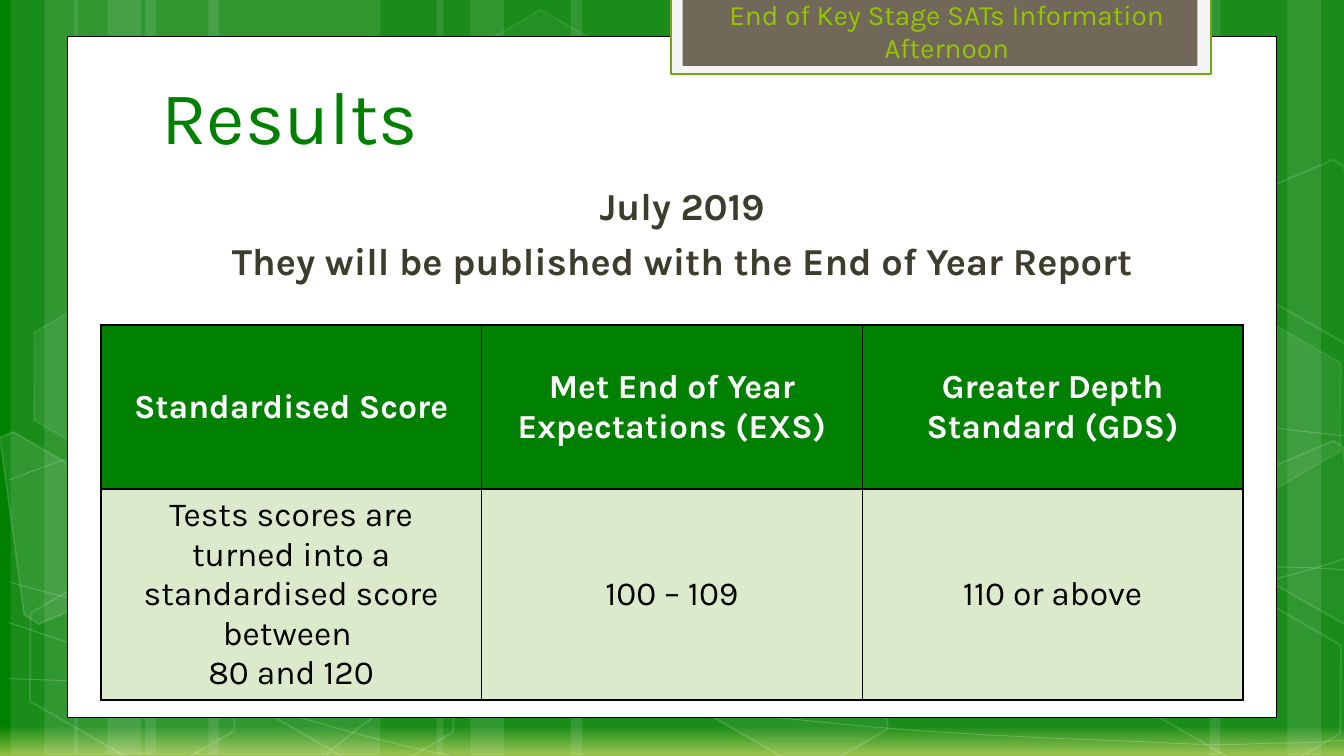
import math
import pptx
import pptx.util
import pptx.dml.color
import pptx.enum.shapes
import pptx.enum.text
import pptx.oxml
import pptx.oxml.ns
from lxml import etree

PX = 9144
WIDE, HIGH = 1000, 562
FONT = "Karla"
RGB = pptx.dml.color.RGBColor
WHITE = RGB(0xFF, 0xFF, 0xFF)
BLACK = RGB(0x00, 0x00, 0x00)
GREEN = RGB(0x00, 0x80, 0x00)
LIME = RGB(0x93, 0xBF, 0x3F)
OLIVE = RGB(0x81, 0xA5, 0x3E)
PALE = RGB(0xDC, 0xEA, 0xCC)
LEAF = RGB(0x74, 0xA5, 0x10)
BRIGHT = RGB(0x94, 0xC6, 0x00)
CLOUD = RGB(0xF5, 0xF5, 0xF5)
BROWN = RGB(0x71, 0x68, 0x5A)
DARK = RGB(0x3E, 0x3D, 0x2D)
KIND = pptx.enum.shapes.MSO_SHAPE
ALIGN = pptx.enum.text.PP_ALIGN
ANCHOR = pptx.enum.text.MSO_ANCHOR
qn = pptx.oxml.ns.qn

BARS = [(108, 175), (8, 50), (33, 83), (155, 175), (55, 50), (80, 83),
        (733, 175), (958, 50), (900, 83), (425, 308), (325, 50), (350, 83)]
CURVES = [
    [(7, 505), (61, 507), (115, 509), (190, 508), (265, 507), (358, 506), (458, 499),
     (558, 491), (700, 477), (792, 463), (883, 448), (977, 426), (1007, 413)],
    [(7, 357), (36, 346), (65, 335), (121, 323), (178, 312), (259, 296), (347, 290),
     (436, 285), (544, 284), (654, 290), (764, 296), (947, 319), (1007, 325)],
    [(6, 463), (127, 504), (247, 545), (334, 562)],
    [(7, 433), (38, 442), (70, 450), (128, 462), (186, 474), (273, 492), (357, 505),
     (440, 517), (545, 531), (628, 539), (711, 547), (800, 550), (853, 552),
     (905, 555), (919, 554), (945, 553), (971, 553), (989, 552), (1007, 550)],
    [(242, 562), (260, 547), (278, 532), (302, 518), (326, 504), (360, 489), (388, 479),
     (416, 469), (433, 464), (470, 457), (506, 449), (573, 438), (608, 433),
     (644, 428), (649, 429), (680, 427), (711, 425), (760, 423), (794, 422),
     (829, 421), (886, 422), (886, 422), (908, 422), (931, 422), (953, 422),
     (971, 422), (988, 423), (997, 424), (1006, 424), (1003, 424), (1006, 425)],
]
HEXES = [(334, 27, 4, 8), (497, 442, 6, 12), (11, 443, 0, 12), (14, 234, 7, 8),
         (174, 444, 0, 12), (834, 445, 0, 12), (834, 235, 7, 8)]
CUTS = [
    ([(0, 325), (10, 321), (86, 365), (95, 436), (29, 464), (18, 457)], (36, 402), 10),
    ([(926, 356), (992, 328), (999, 332), (1018, 468), (1012, 471), (935, 427)],
     (985, 390), 4),
    ([(926, 147), (992, 119), (1000, 124), (1018, 260), (1012, 262), (935, 218)],
     (985, 181), 0),
]


def place(item, box):
    item.left, item.top, item.width, item.height = [n * PX for n in box]


def fade(color, clear):
    etree.SubElement(color, qn("a:alpha")).set("val", str(clear * 1000))


def style(shape, fill=None, line=None, width=1, clear=100, haze=100):
    shape.shadow.inherit = False
    props = shape.element.spPr
    if fill is None or clear == 0:
        shape.fill.background()
    else:
        shape.fill.solid()
        shape.fill.fore_color.rgb = fill
        if clear < 100:
            fade(props.find(qn("a:solidFill"))[0], clear)
    if line is None:
        shape.line.fill.background()
    else:
        shape.line.color.rgb = line
        shape.line.width = pptx.util.Pt(width)
        if haze < 100:
            fade(props.find(qn("a:ln")).find(qn("a:solidFill"))[0], haze)


def block(slide, kind, box, **look):
    shape = slide.shapes.add_shape(kind, *[n * PX for n in box])
    style(shape, **look)
    return shape


def outline(slide, spots, left, top, close, **look):
    spots = [((left + x) * PX, (top + y) * PX) for x, y in spots]
    maker = slide.shapes.build_freeform(*spots[0])
    maker.add_line_segments(spots[1:], close=close)
    shape = maker.convert_to_shape()
    style(shape, **look)
    return shape


def bend(shape):
    track = shape.element.find(".//" + qn("a:path"))
    parts = track.findall(qn("a:lnTo"))
    for n in range(0, len(parts), 3):
        curve = etree.SubElement(track, qn("a:cubicBezTo"))
        for part in parts[n:n + 3]:
            curve.append(part[0])
            track.remove(part)


def turn(spots, mid, angle):
    cos, sin = math.cos(math.radians(angle)), math.sin(math.radians(angle))
    return [(mid[0] + (x - mid[0]) * cos - (y - mid[1]) * sin,
             mid[1] + (x - mid[0]) * sin + (y - mid[1]) * cos) for x, y in spots]


def write(frame, lines, size, color, bold=False, align=ALIGN.CENTER, gap=0):
    for n, line in enumerate(lines):
        para = frame.paragraphs[0] if n == 0 else frame.add_paragraph()
        para.alignment = align
        para.space_before = pptx.util.Pt(gap)
        run = para.add_run()
        run.text = line
        run.font.name = FONT
        run.font.size = pptx.util.Pt(size)
        run.font.bold = bold
        run.font.color.rgb = color


def backdrop(slide, box):
    left, top, wide, high = box
    fill = slide.background.fill
    fill.gradient()
    fill.gradient_angle = 270
    stops = fill.gradient_stops
    stops[0].color.rgb, stops[0].position = GREEN, 0.96
    stops[1].color.rgb, stops[1].position = LIME, 1
    row = slide.element.find(".//" + qn("a:gsLst"))
    last = etree.SubElement(row, qn("a:gs"), pos="100000")
    etree.SubElement(last, qn("a:srgbClr"), val=str(OLIVE))
    for x, span in BARS:
        block(slide, KIND.RECTANGLE, (left + x, top, span, high), fill=WHITE, clear=10)
    for knots in CURVES:
        bend(outline(slide, knots, left, top, False, line=WHITE, width=0.5, haze=20))
    for x, y, clear, haze in HEXES:
        shape = block(slide, KIND.HEXAGON, (left + x, top + y, 175, 114),
                      fill=WHITE, clear=clear, line=WHITE, haze=haze)
        shape.adjustments[0] = 0.285
        shape.rotation = 30
    for spots, mid, clear in CUTS:
        shape = outline(slide, turn(spots, mid, -30), left, top, True,
                        fill=WHITE, clear=clear, line=WHITE, haze=12)
        shape.rotation = 30


def banner(slide, box):
    left, top, wide, high = box
    block(slide, KIND.RECTANGLE, box, fill=CLOUD, line=LEAF, width=1.25)
    block(slide, KIND.RECTANGLE, (left + 9, top, wide - 19, high - 6), fill=BROWN)
    label = slide.shapes.add_textbox(*[n * PX for n in (left + 32, top + 8, 347, 47)])
    frame = label.text_frame
    frame.word_wrap = True
    frame.vertical_anchor = ANCHOR.BOTTOM
    write(frame, ["End of Key Stage SATs Information Afternoon"], 15, BRIGHT)


def heading(slide, box):
    left, top, wide, high = box
    title, body = slide.placeholders[0], slide.placeholders[1]
    place(title, (left, top, wide, 94))
    place(body, (left + 27, top + 101, wide - 27, high - 102))
    for item in (title, body):
        item.element.getparent().append(item.element)
        item.text_frame.word_wrap = True
        item.text_frame.auto_size = pptx.enum.text.MSO_AUTO_SIZE.NONE
    title.text_frame.vertical_anchor = ANCHOR.BOTTOM
    body.text_frame.vertical_anchor = ANCHOR.TOP
    write(title.text_frame, ["Results"], 40, GREEN, align=ALIGN.LEFT)
    write(body.text_frame, ["July 2019", "They will be published with the End of Year Report"],
          20.4, DARK, bold=True, gap=4.8)
    for para in body.text_frame.paragraphs:
        props = para._p.get_or_add_pPr()
        props.set("marL", "0")
        props.set("indent", "0")
        etree.SubElement(props, qn("a:buNone"))


def edge(cell):
    props = cell._tc.get_or_add_tcPr()
    for side in ("a:lnL", "a:lnR", "a:lnT", "a:lnB"):
        line = etree.SubElement(props, qn(side), w="12700")
        solid = etree.SubElement(line, qn("a:solidFill"))
        etree.SubElement(solid, qn("a:srgbClr"), val=str(BLACK))


def scores(slide, box):
    rows = [
        [["Standardised Score"], ["Met End of Year Expectations (EXS)"],
         ["Greater Depth Standard (GDS)"]],
        [["Tests scores are turned into a standardised score between ", "80 and 120"],
         ["100 – 109"], ["110 or above"]],
    ]
    looks = [(GREEN, WHITE, True), (PALE, BLACK, False)]
    table = slide.shapes.add_table(2, 3, *[n * PX for n in box]).table
    table.horz_banding = table.first_row = False
    for row in table.rows:
        row.height = 122 * PX
    for r, (row, (fill, ink, bold)) in enumerate(zip(rows, looks)):
        for c, lines in enumerate(row):
            cell = table.cell(r, c)
            edge(cell)
            cell.fill.solid()
            cell.fill.fore_color.rgb = fill
            cell.vertical_anchor = ANCHOR.MIDDLE
            write(cell.text_frame, lines, 18, ink, bold)


def main():
    deck = pptx.Presentation()
    deck.slide_width = WIDE * PX
    deck.slide_height = WIDE * PX * 9 // 16
    slide = deck.slides.add_slide(deck.slide_layouts[1])
    backdrop(slide, (0, 0, WIDE, HIGH))
    block(slide, KIND.RECTANGLE, (50, 27, 900, 507), fill=WHITE, line=BLACK, width=0.5)
    banner(slide, (499, -2, 402, 57))
    heading(slide, (110, 30, 768, 181))
    scores(slide, (75, 242, 850, 252))
    deck.save("out.pptx")


if __name__ == "__main__":
    main()
